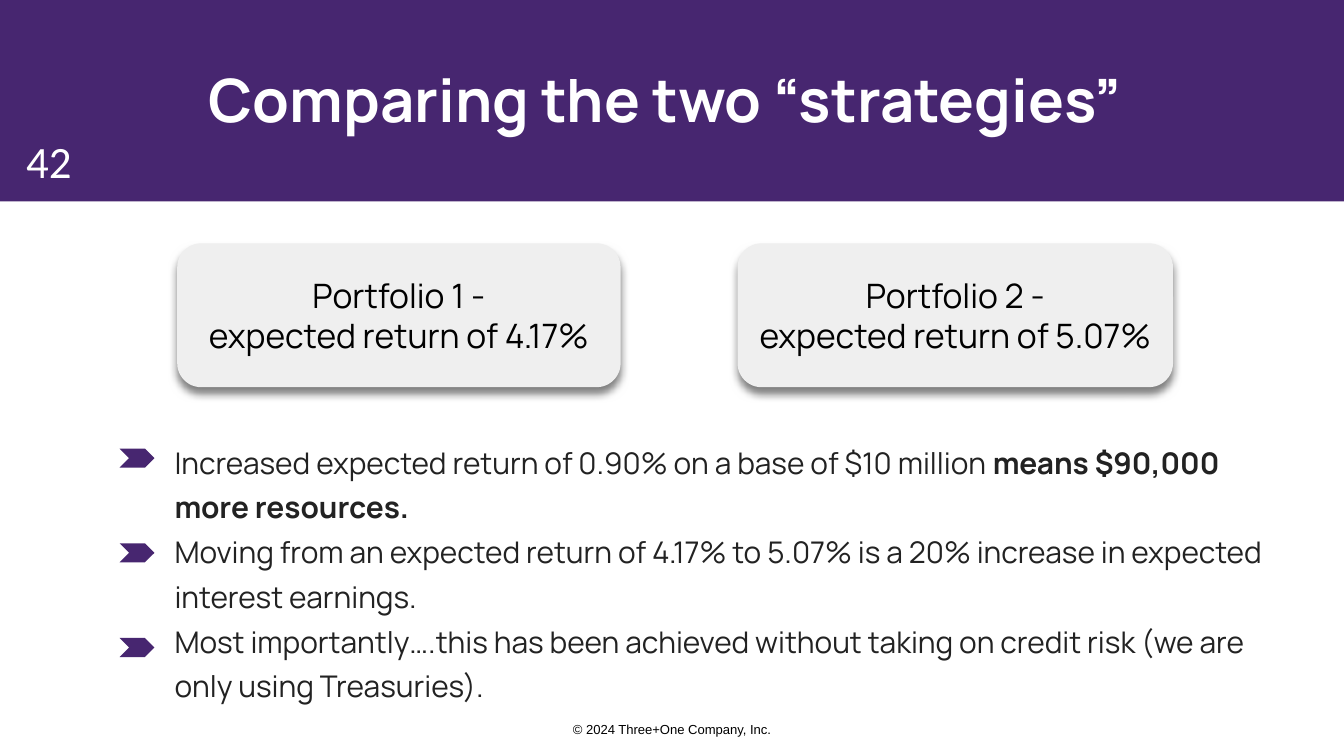
from lxml import etree
from pptx import Presentation
from pptx.dml.color import RGBColor
from pptx.enum.shapes import MSO_SHAPE as Shape
from pptx.enum.text import MSO_ANCHOR as Anchor, PP_ALIGN as Align
from pptx.oxml.ns import qn
from pptx.util import Cm, Pt

COLORS = {
    "purple": "472670",
    "card": "EFEFEF",
    "white": "FFFFFF",
    "black": "000000",
    "body": "222222",
}
FONT = "Manrope"
CARD_TOP, CARD_HEIGHT = 4.6, 2.72
CARDS = [
    (3.35, 8.38, ["Portfolio 1 -", "expected return of 4.17%"]),
    (13.94, 8.23, ["Portfolio 2 -", "expected return of 5.07%"]),
]
# Each point is a list of (text, bold) runs.
POINTS = [
    [("Increased expected return of 0.90% on a base of $10 million ", False),
     ("means $90,000 more resources.", True)],
    [("Moving from an expected return of 4.17% to 5.07% is a 20% increase "
      "in expected interest earnings.", False)],
    [("Most importantly….this has been achieved without taking on credit "
      "risk (we are only using Treasuries).", False)],
]
MARKER_TOP, MARKER_PITCH = 8.48, 1.79


def rgb(name):
    return RGBColor.from_string(COLORS[name])


def make_shadow(blur, distance, opacity):
    """Return an effect list with a black shadow falling straight down."""
    effects = etree.Element(qn("a:effectLst"))
    shadow = etree.SubElement(
        effects, qn("a:outerShdw"), blurRad=str(Pt(blur)),
        dist=str(Pt(distance)), dir="5400000", algn="bl", rotWithShape="0")
    color = etree.SubElement(shadow, qn("a:srgbClr"), val=COLORS["black"])
    etree.SubElement(color, qn("a:alpha"), val=str(opacity * 1000))
    return effects


def write(shape, paragraphs, size, color="black", font=FONT, align=Align.CENTER,
          anchor=Anchor.TOP, spacing=None, bold=False, shadow=False):
    """Fill a shape with paragraphs, each a string or a list of (text, bold) runs."""
    frame = shape.text_frame
    frame.word_wrap = True
    frame.vertical_anchor = anchor
    frame.margin_left = frame.margin_right = Cm(0.25)
    frame.margin_top = frame.margin_bottom = Cm(0.25)
    for index, content in enumerate(paragraphs):
        paragraph = frame.add_paragraph() if index else frame.paragraphs[0]
        paragraph.alignment = align
        paragraph.line_spacing = spacing
        runs = [(content, bold)] if isinstance(content, str) else content
        for text, is_bold in runs:
            run = paragraph.add_run()
            run.text = text
            run.font.size = Pt(size)
            run.font.name = font
            run.font.bold = is_bold
            run.font.color.rgb = rgb(color)
            if shadow:
                fill = run.font._element.find(qn("a:solidFill"))
                fill.addnext(make_shadow(4.5, 3.8, 50))


def add_text(shapes, left, top, width, height, paragraphs, **style):
    box = shapes.add_textbox(Cm(left), Cm(top), Cm(width), Cm(height))
    write(box, paragraphs, **style)


def add_block(shapes, kind, left, top, width, height, color):
    block = shapes.add_shape(kind, Cm(left), Cm(top), Cm(width), Cm(height))
    block.shadow.inherit = False
    block.fill.solid()
    block.fill.fore_color.rgb = rgb(color)
    block.line.fill.background()
    return block


def add_card(shapes, left, width, lines):
    card = add_block(shapes, Shape.ROUNDED_RECTANGLE, left, CARD_TOP, width,
                     CARD_HEIGHT, "card")
    no_effects = card._element.spPr.find(qn("a:effectLst"))
    no_effects.getparent().replace(no_effects, make_shadow(4.5, 3.8, 49))
    write(card, lines, size=18, anchor=Anchor.MIDDLE)


def add_takeaways(shapes):
    takeaways = shapes.add_group_shape().shapes
    add_text(takeaways, 3.05, 7.98, 21.13, 4.93, POINTS, size=16, color="body",
             align=Align.LEFT, spacing=1.25)
    for row in range(len(POINTS)):
        add_block(takeaways, Shape.CHEVRON, 2.26, MARKER_TOP + row * MARKER_PITCH,
                  0.66, 0.36, "purple")


def main():
    deck = Presentation()
    deck.slide_width, deck.slide_height = Cm(25.4), Cm(14.29)
    shapes = deck.slides.add_slide(deck.slide_layouts[6]).shapes

    add_block(shapes, Shape.RECTANGLE, 0, 0, 25.4, 3.81, "purple")
    add_text(shapes, 2.13, 0.94, 21.13, 2.18, ["Comparing the two “strategies” "],
             size=32, color="white", bold=True, shadow=True)
    add_text(shapes, 0, -0.99, 1.85, 4.78, ["42"], size=24, color="white",
             font="Calibri", anchor=Anchor.BOTTOM)
    for left, width, lines in CARDS:
        add_card(shapes, left, width, lines)
    add_takeaways(shapes)
    add_text(shapes, 10.21, 13.49, 4.98, 0.81, ["© 2024 Three+One Company, Inc."],
             size=7, font="Arial")
    deck.save("out.pptx")


if __name__ == "__main__":
    main()
